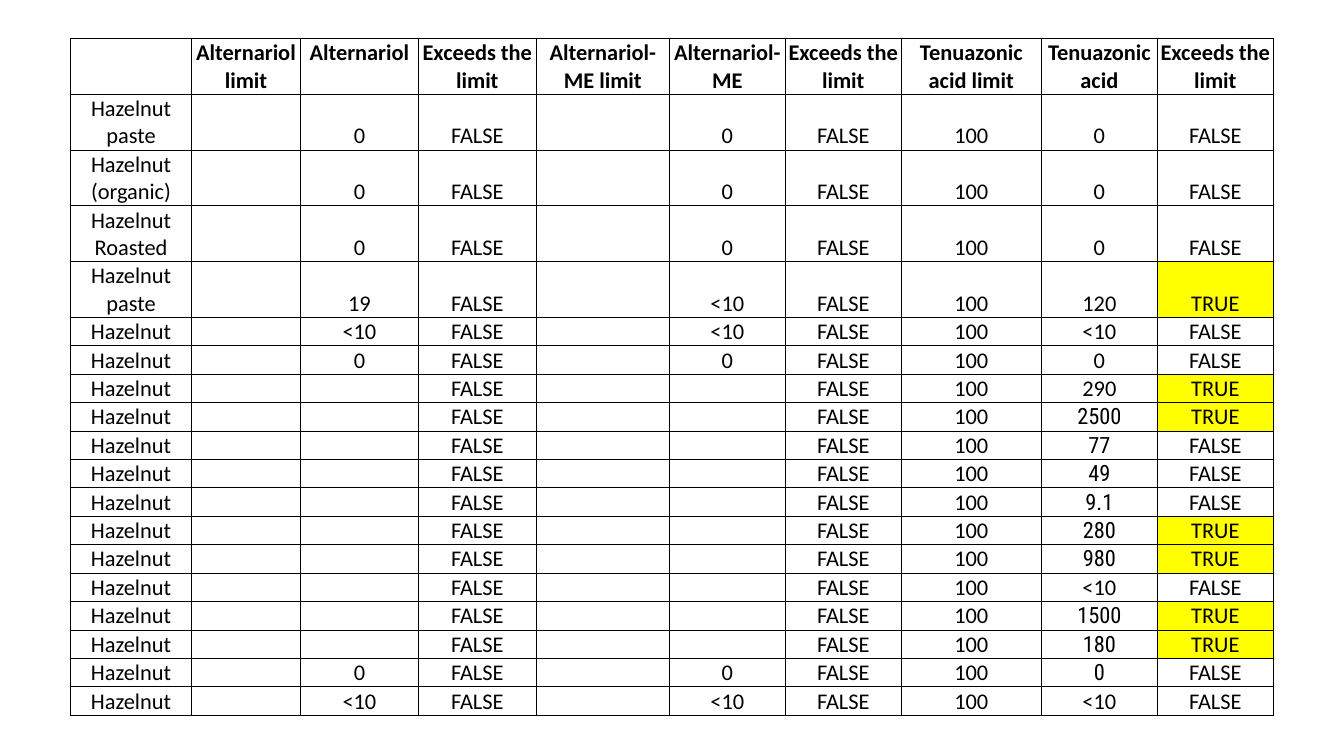
from lxml.etree import SubElement
from pptx import Presentation
from pptx.dml.color import RGBColor
from pptx.enum.text import MSO_ANCHOR as Anchor, PP_ALIGN as Align
from pptx.oxml.ns import qn
from pptx.util import Inches, Pt

HEADERS = ["", "Alternariol limit", "Alternariol", "Exceeds the limit",
           "Alternariol-ME limit", "Alternariol-ME", "Exceeds the limit",
           "Tenuazonic acid limit", "Tenuazonic acid", "Exceeds the limit"]
COLUMN_WIDTHS = [1.2, 1.08, 1.17, 1.17, 1.32, 1.15, 1.15, 1.39, 1.15, 1.15]
ROW_HEIGHT = 0.28
ACID_LIMIT = 100
ACID_COLUMN = 8
CONDENSED_ROWS = {8, 9, 10, 11, 12, 13, 15, 16, 17}

# sample, alternariol, alternariol-ME, tenuazonic acid
SAMPLES = [
    ("Hazelnut paste", "0", "0", "0"),
    ("Hazelnut (organic)", "0", "0", "0"),
    ("Hazelnut Roasted", "0", "0", "0"),
    ("Hazelnut paste", "19", "<10", "120"),
    ("Hazelnut", "<10", "<10", "<10"),
    ("Hazelnut", "0", "0", "0"),
    ("Hazelnut", "", "", "290"),
    ("Hazelnut", "", "", "2500"),
    ("Hazelnut", "", "", "77"),
    ("Hazelnut", "", "", "49"),
    ("Hazelnut", "", "", "9.1"),
    ("Hazelnut", "", "", "280"),
    ("Hazelnut", "", "", "980"),
    ("Hazelnut", "", "", "<10"),
    ("Hazelnut", "", "", "1500"),
    ("Hazelnut", "", "", "180"),
    ("Hazelnut", "0", "0", "0"),
    ("Hazelnut", "<10", "<10", "<10"),
]


def color(value):
    return RGBColor.from_string(value)


def write_cell(cell, text, font="Calibri", size=16, bold=False,
               anchor=Anchor.BOTTOM, fill=None):
    """Set a cell's text, margins, thin black borders and optional fill."""
    cell.margin_left = cell.margin_right = cell.margin_top = Inches(0.01)
    cell.margin_bottom = Inches(0)
    cell.vertical_anchor = anchor
    para = cell.text_frame.paragraphs[0]
    para.alignment = Align.CENTER
    if text:
        span = para.add_run()
        span.text = text
        span.font.name = font
        span.font.size = Pt(size)
        span.font.bold = bold
        span.font.color.rgb = color("000000")
    else:
        # An empty cell needs its own size, or it makes the row taller
        end = SubElement(para._p, qn("a:endParaRPr"), sz=str(size * 100))
        SubElement(end, qn("a:latin"), typeface=font)

    properties = cell._tc.get_or_add_tcPr()
    for side in ("a:lnL", "a:lnR", "a:lnT", "a:lnB"):
        border = SubElement(properties, qn(side), w=str(Pt(0.5)))
        paint = SubElement(border, qn("a:solidFill"))
        SubElement(paint, qn("a:srgbClr"), val="000000")
    if fill:
        cell.fill.solid()
        cell.fill.fore_color.rgb = color(fill)
    else:
        cell.fill.background()


deck = Presentation()
deck.slide_width = Inches(13.33)
deck.slide_height = Inches(7.5)
page = deck.slides.add_slide(deck.slide_layouts[6])

frame = page.shapes.add_table(len(SAMPLES) + 1, len(HEADERS), Inches(0.7),
                              Inches(0.38), Inches(11.93), Inches(6.61))
table = frame.table
table.first_row = False
table.horz_banding = False
for column, width in zip(table.columns, COLUMN_WIDTHS):
    column.width = Inches(width)
for row in table.rows:
    row.height = Inches(ROW_HEIGHT)
frame.height = Inches(6.61)

for column, header in enumerate(HEADERS):
    write_cell(table.cell(0, column), header, bold=True, anchor=Anchor.TOP)

for row, (sample, alternariol, alternariol_me, acid) in enumerate(SAMPLES, 1):
    exceeds = not acid.startswith("<") and float(acid) > ACID_LIMIT
    values = [sample, "", alternariol, "FALSE", "", alternariol_me, "FALSE",
              str(ACID_LIMIT), acid, "TRUE" if exceeds else "FALSE"]
    for column, value in enumerate(values):
        style = {}
        if column == ACID_COLUMN and row in CONDENSED_ROWS:
            style = {"font": "Roboto Condensed", "anchor": Anchor.MIDDLE}
        elif value == "TRUE":
            style = {"fill": "FFFF00"}
        write_cell(table.cell(row, column), value, **style)

deck.save("out.pptx")
